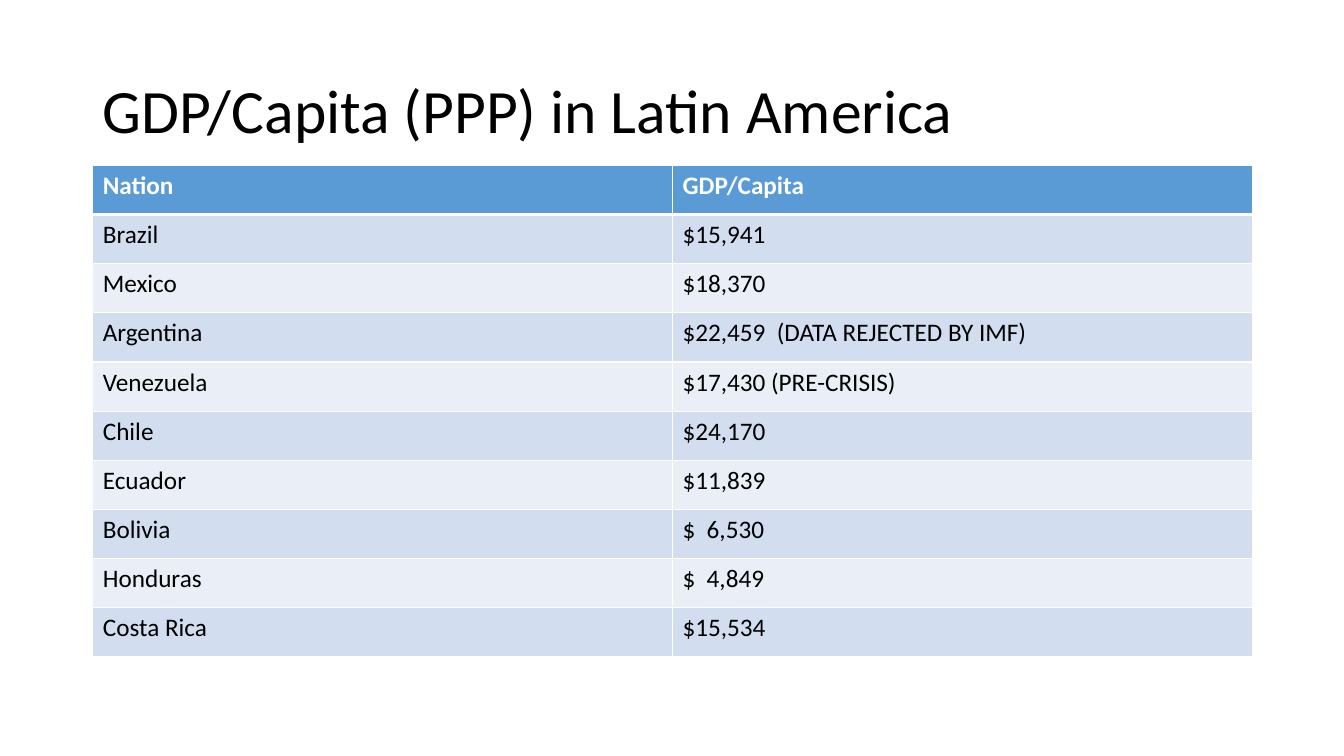
"""Build a slide with a table of GDP per capita in Latin America."""
from dataclasses import dataclass

from lxml.etree import SubElement
from pptx import Presentation
from pptx.dml.color import RGBColor as Rgb
from pptx.enum.text import MSO_ANCHOR as Anchor
from pptx.oxml.ns import qn
from pptx.util import Inches, Pt

NATIONS = [
    ("Nation", "GDP/Capita"),
    ("Brazil", "$15,941"),
    ("Mexico", "$18,370"),
    ("Argentina", "$22,459  (DATA REJECTED BY IMF)"),
    ("Venezuela", "$17,430 (PRE-CRISIS)"),
    ("Chile", "$24,170"),
    ("Ecuador", "$11,839"),
    ("Bolivia", "$  6,530"),
    ("Honduras", "$  4,849"),
    ("Costa Rica", "$15,534"),
]


@dataclass(frozen=True)
class Theme:
    """Colours, font and type sizes of the slide."""
    font: str = "Calibri"
    title_size: int = 44
    table_size: int = 18
    text: str = "000000"
    header_text: str = "FFFFFF"
    header_fill: str = "5B9BD5"
    bands: tuple = ("EAEFF7", "D2DEEF")
    rule: str = "FFFFFF"
    rule_width: int = 1
    header_rule_width: int = 3


class SlideBuilder:
    """Draw elements on one slide in one theme."""

    def __init__(self, slide, theme):
        """Keep the slide and its theme."""
        self.slide = slide
        self.theme = theme

    def style(self, paragraph, size, color, bold=False):
        """Set the font of a whole paragraph."""
        font = paragraph.font
        font.name = self.theme.font
        font.size = Pt(size)
        font.bold = bold
        font.color.rgb = Rgb.from_string(color)

    def title(self, text, left, top, width, height):
        """Add the slide title."""
        frame = self.slide.shapes.add_textbox(
            Inches(left), Inches(top), Inches(width), Inches(height)).text_frame
        frame.word_wrap = True
        frame.vertical_anchor = Anchor.MIDDLE
        heading = frame.paragraphs[0]
        heading.text = text
        heading.line_spacing = 0.9
        self.style(heading, self.theme.title_size, self.theme.text)

    def border(self, cell, side, width):
        """Rule one side of a cell."""
        line = SubElement(cell._tc.get_or_add_tcPr(), qn(f"a:ln{side}"), w=str(Pt(width)))
        SubElement(SubElement(line, qn("a:solidFill")), qn("a:srgbClr"), val=self.theme.rule)

    def cell(self, cell, text, row):
        """Fill, rule and write one table cell."""
        theme = self.theme
        header = row == 0
        thick_side = {0: "B", 1: "T"}.get(row)
        for side in "LRTB":
            self.border(cell, side, theme.header_rule_width if side == thick_side else theme.rule_width)
        cell.fill.solid()
        cell.fill.fore_color.rgb = Rgb.from_string(theme.header_fill if header else theme.bands[row % 2])
        entry = cell.text_frame.paragraphs[0]
        entry.text = text
        self.style(entry, theme.table_size, theme.header_text if header else theme.text, header)

    def table(self, rows, left, top, width, height):
        """Add a banded table with a header row."""
        grid = self.slide.shapes.add_table(
            len(rows), len(rows[0]), Inches(left), Inches(top), Inches(width), Inches(height)).table
        for row, entries in enumerate(rows):
            for column, text in enumerate(entries):
                self.cell(grid.cell(row, column), text, row)


def main():
    """Build and save the presentation."""
    deck = Presentation()
    deck.slide_width, deck.slide_height = Inches(13.33), Inches(7.5)
    builder = SlideBuilder(deck.slides.add_slide(deck.slide_layouts[6]), Theme())
    builder.title("GDP/Capita (PPP) in Latin America", 0.92, 0.4, 11.5, 1.45)
    builder.table(NATIONS, 0.92, 1.64, 11.5, 4.88)
    deck.save("out.pptx")


if __name__ == "__main__":
    main()
